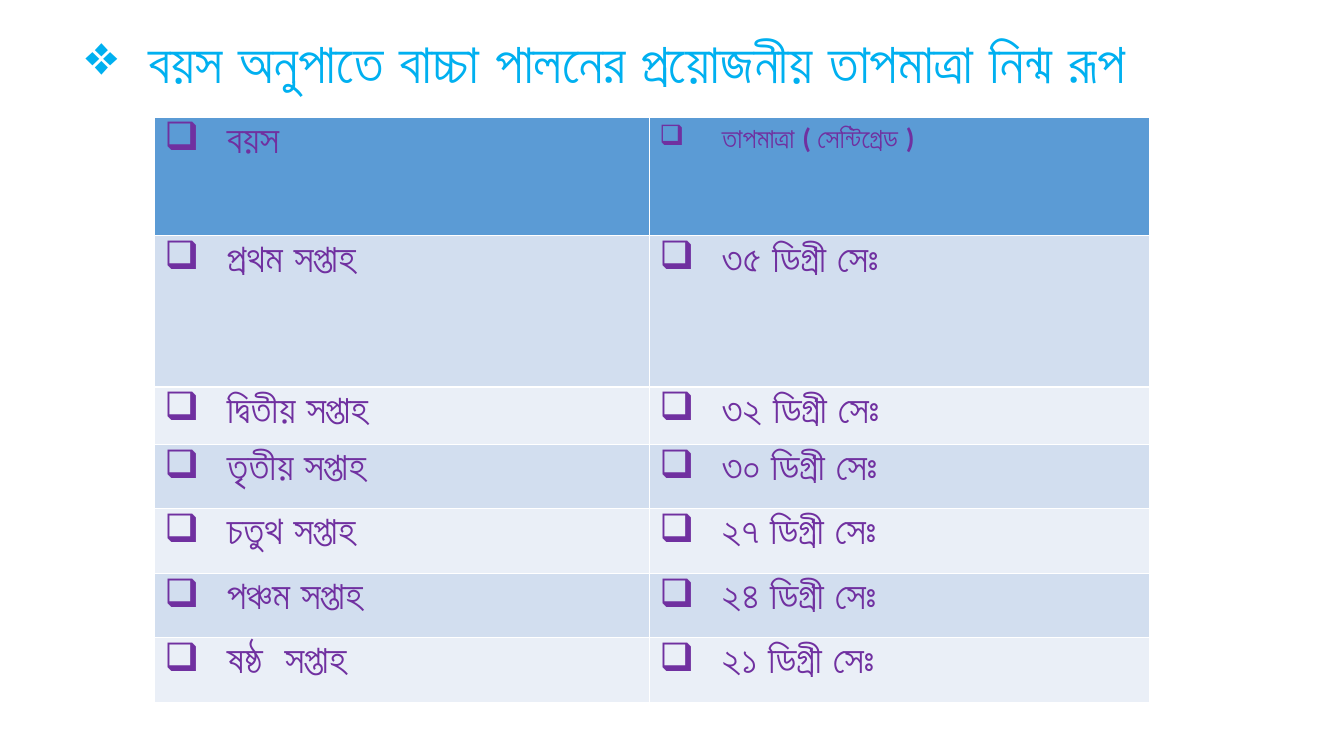
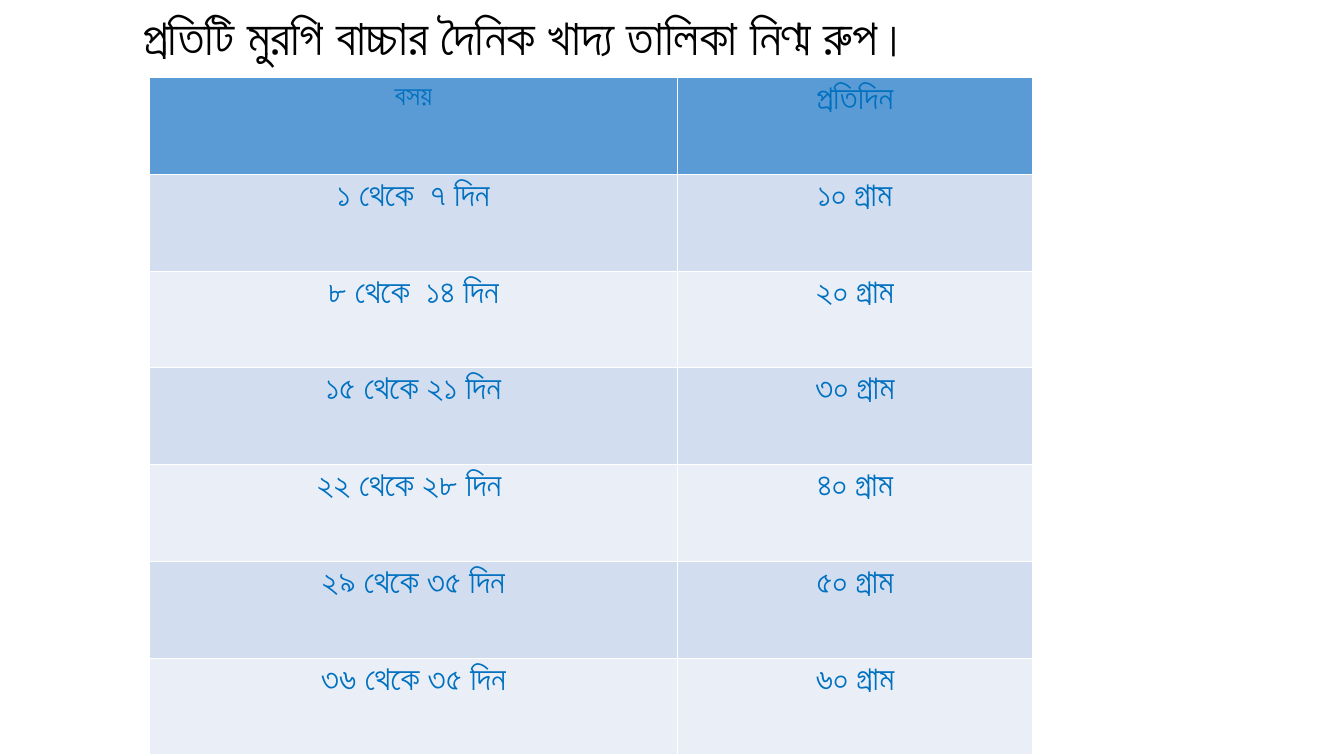
"""Build two slides on rearing chicks: brooding heat and daily feed."""
from lxml import etree
from pptx import Presentation
from pptx import util as u
from pptx.dml.color import RGBColor
from pptx.enum import text
from pptx.oxml import ns

HUES = {"sky": "00B0F0", "plum": "7030A0", "blue": "0070C0", "black": "000000",
        "head": "5B9BD5", "odd": "D2DEEF", "even": "EAEFF7"}


class Deck:
    def __init__(self):
        self.prs = Presentation()
        self.prs.slide_width = u.Inches(13.33)
        self.prs.slide_height = u.Inches(7.5)
        self.slide = None

    def page(self):
        self.slide = self.prs.slides.add_slide(self.prs.slide_layouts[6])

    def hue(self, name):
        return RGBColor.from_string(HUES[name])

    def label(self, para, words, size, face, hue, bold=False, mark=None):
        para.text = words
        if mark:
            props = para._p.get_or_add_pPr()
            props.set("marL", str(u.Inches(0.62)))
            props.set("indent", str(u.Inches(-0.62)))
            etree.SubElement(props, ns.qn("a:buChar")).set("char", mark)
        font = para.font
        font.size, font.name, font.bold = u.Pt(size), face, bold
        font.color.rgb = self.hue(hue)

    def title(self, box, words, size, hue, bold=False, mark=None):
        frame = self.slide.shapes.add_textbox(*map(u.Inches, box)).text_frame
        frame.word_wrap = True
        frame.auto_size = text.MSO_AUTO_SIZE.SHAPE_TO_FIT_TEXT
        self.label(frame.paragraphs[0], words, size, "Lato", hue, bold, mark)

    def table(self, left, top, cols, rows, data, heads, body, hue,
              bold=False, mark=None, align=None):
        size = (left, top, sum(cols), sum(rows))
        grid = self.slide.shapes.add_table(
            len(rows), len(cols), *map(u.Inches, size)).table
        for col, width in zip(grid.columns, cols):
            col.width = u.Inches(width)
        for row, height in zip(grid.rows, rows):
            row.height = u.Inches(height)
        for i, line in enumerate(data):
            fill = ("odd" if i % 2 else "even") if i else "head"
            for j, words in enumerate(line):
                cell = grid.cell(i, j)
                cell.fill.solid()
                cell.fill.fore_color.rgb = self.hue(fill)
                para = cell.text_frame.paragraphs[0]
                pt, face, heavy = (*body, bold) if i else heads[j]
                self.label(para, words, pt, face, hue, heavy, mark)
                if align:
                    para.alignment = align


def main():
    deck = Deck()

    deck.page()
    deck.title((0.75, 0.22, 12.24, 0.77),
               "বয়স অনুপাতে বাচ্চা পালনের প্রয়োজনীয় তাপমাত্রা নিন্ম রূপ",
               40, "sky", bold=True, mark="❖")
    heat = [("বয়স", "তাপমাত্রা ( সেন্টিগ্রেড )"),
            ("প্রথম সপ্তাহ", "৩৫ ডিগ্রী সেঃ"),
            ("দ্বিতীয় সপ্তাহ", "৩২ ডিগ্রী সেঃ"),
            ("তৃতীয় সপ্তাহ", "৩০ ডিগ্রী সেঃ"),
            ("চতুথ সপ্তাহ", "২৭ ডিগ্রী সেঃ"),
            ("পঞ্চম সপ্তাহ", "২৪ ডিগ্রী সেঃ"),
            ("ষষ্ঠ  সপ্তাহ", "২১ ডিগ্রী সেঃ")]
    deck.table(1.53, 1.16, [4.91, 4.96], [1.18, 1.5, 0.56] + [0.64] * 4, heat,
               [(28, "Calibri", True), (20, "Calibri", True)],
               (28, "Calibri"), "plum", bold=True, mark="❑")

    deck.page()
    deck.title((1.32, 0, 9.81, 0.71),
               "প্রতিটি মুরগি বাচ্চার দৈনিক খাদ্য তালিকা নিণ্ম রুপ।", 36, "black")
    feed = [("বসয়", "প্রতিদিন"),
            ("১ থেকে  ৭ দিন", "১০ গ্রাম"),
            ("৮ থেকে  ১৪ দিন", "২০ গ্রাম"),
            ("১৫ থেকে ২১ দিন", "৩০ গ্রাম"),
            ("২২ থেকে ২৮ দিন ", "৪০ গ্রাম"),
            ("২৯ থেকে ৩৫ দিন", "৫০ গ্রাম"),
            ("৩৬ থেকে ৩৫ দিন", "৬০ গ্রাম")]
    deck.table(1.48, 0.77, [5.24, 3.52], [0.96] * 7, feed,
               [(20, "Calibri", False), (24, "Lato", True)],
               (24, "Lato"), "blue", align=text.PP_ALIGN.CENTER)

    deck.prs.save("out.pptx")


if __name__ == "__main__":
    main()
